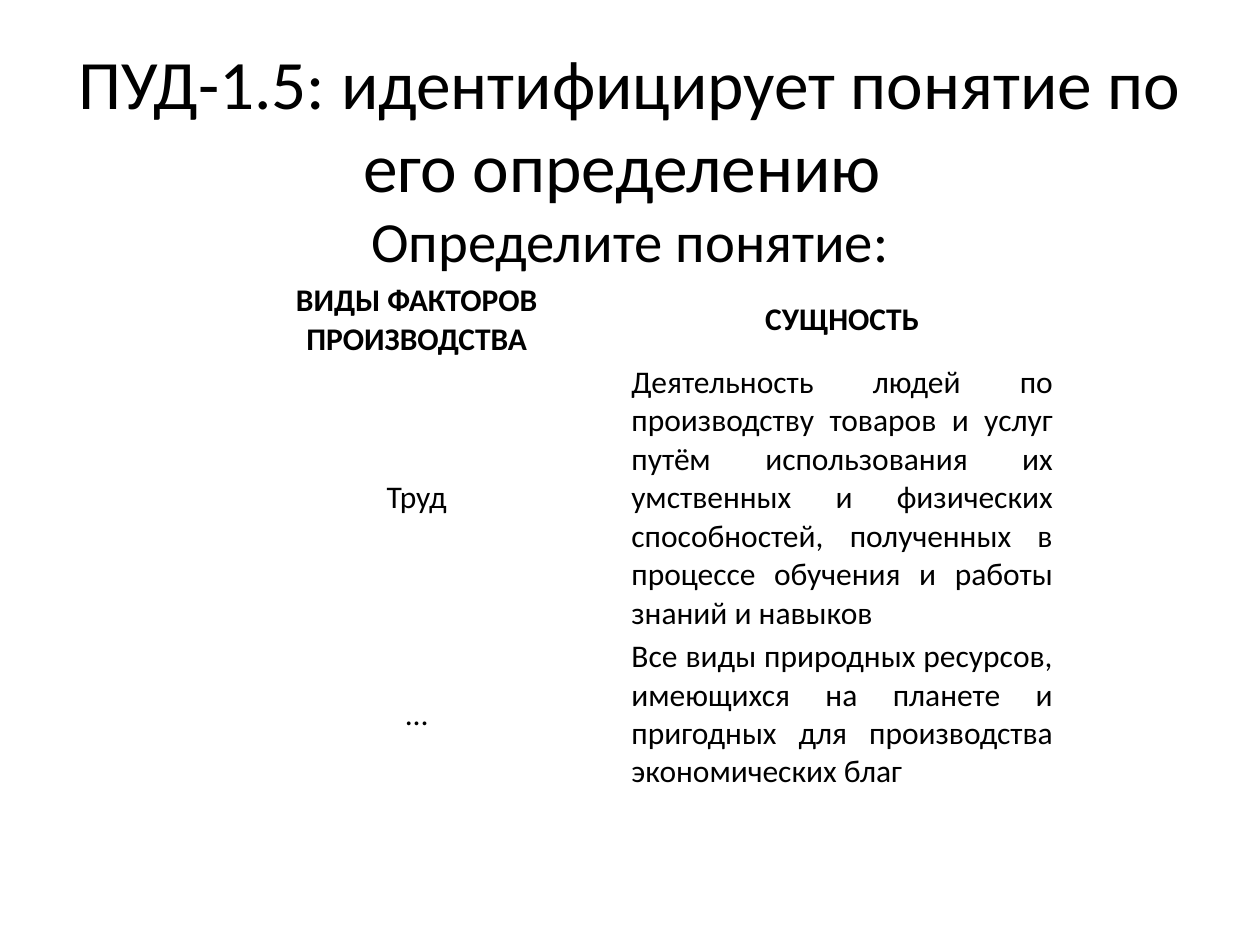
from pptx import Presentation
from pptx.dml.color import RGBColor
from pptx.enum.text import MSO_ANCHOR, PP_ALIGN
from pptx.util import Pt

BLACK = RGBColor(0, 0, 0)
FONT = "Calibri"
EMU_PER_PX = 914400 / 126

HEADING = "ПУД-1.5: идентифицирует понятие по его определению "
TASK = "Определите понятие:"
ROWS = [
    ("ВИДЫ ФАКТОРОВ ПРОИЗВОДСТВА", "СУЩНОСТЬ"),
    ("Труд", "Деятельность людей по производству товаров и услуг путём "
             "использования их умственных и физических способностей, "
             "полученных в процессе обучения и работы знаний и навыков"),
    ("…", "Все виды природных ресурсов, имеющихся на планете и пригодных "
          "для производства экономических благ"),
]
ROW_HEIGHTS = (82, 274, 159)


def px(n):
    return round(n * EMU_PER_PX)


def set_font(font, size, bold=False):
    font.name = FONT
    font.size = Pt(size)
    font.bold = bold
    font.color.rgb = BLACK


def add_title(s, x, y, w, h):
    tf = s.shapes.add_textbox(px(x), px(y), px(w), px(h)).text_frame
    tf.word_wrap = True
    tf.vertical_anchor = MSO_ANCHOR.TOP
    tf.margin_top = tf.margin_bottom = px(2)
    p = tf.paragraphs[0]
    p.alignment = PP_ALIGN.CENTER
    for text, size in ((HEADING, 39.6), (TASK, 32.4)):
        if p.runs:
            p.add_line_break()
        r = p.add_run()
        r.text = text
        set_font(r.font, size)


def add_factor_table(s, x, y, w):
    table = s.shapes.add_table(len(ROWS), 2, px(x), px(y), px(w),
                               px(sum(ROW_HEIGHTS))).table
    table.first_row = table.horz_banding = False
    for row, height in zip(table.rows, ROW_HEIGHTS):
        row.height = px(height)
    for i, texts in enumerate(ROWS):
        for j, text in enumerate(texts):
            cell = table.cell(i, j)
            cell.fill.background()
            cell.vertical_anchor = MSO_ANCHOR.MIDDLE
            cell.margin_left = cell.margin_right = px(2)
            cell.margin_top = cell.margin_bottom = px(2)
            cell.text = text
            p = cell.text_frame.paragraphs[0]
            # Definitions are justified, everything else is centred
            p.alignment = PP_ALIGN.JUSTIFY if i and j else PP_ALIGN.CENTER
            set_font(p.font, 18, bold=i == 0)
    # Plain grid: no style, so no borders
    style = table._tbl.tblPr.find("{*}tableStyleId")
    style.text = "{2D5ABB26-0587-4C30-8999-92F81FD0307C}"


def main():
    prs = Presentation()
    prs.slide_width, prs.slide_height = px(1260), px(945)
    s = prs.slides.add_slide(prs.slide_layouts[6])
    add_title(s, 63, 38, 1134, 157)
    add_factor_table(s, 204, 279, 851)
    prs.save("out.pptx")


if __name__ == "__main__":
    main()
